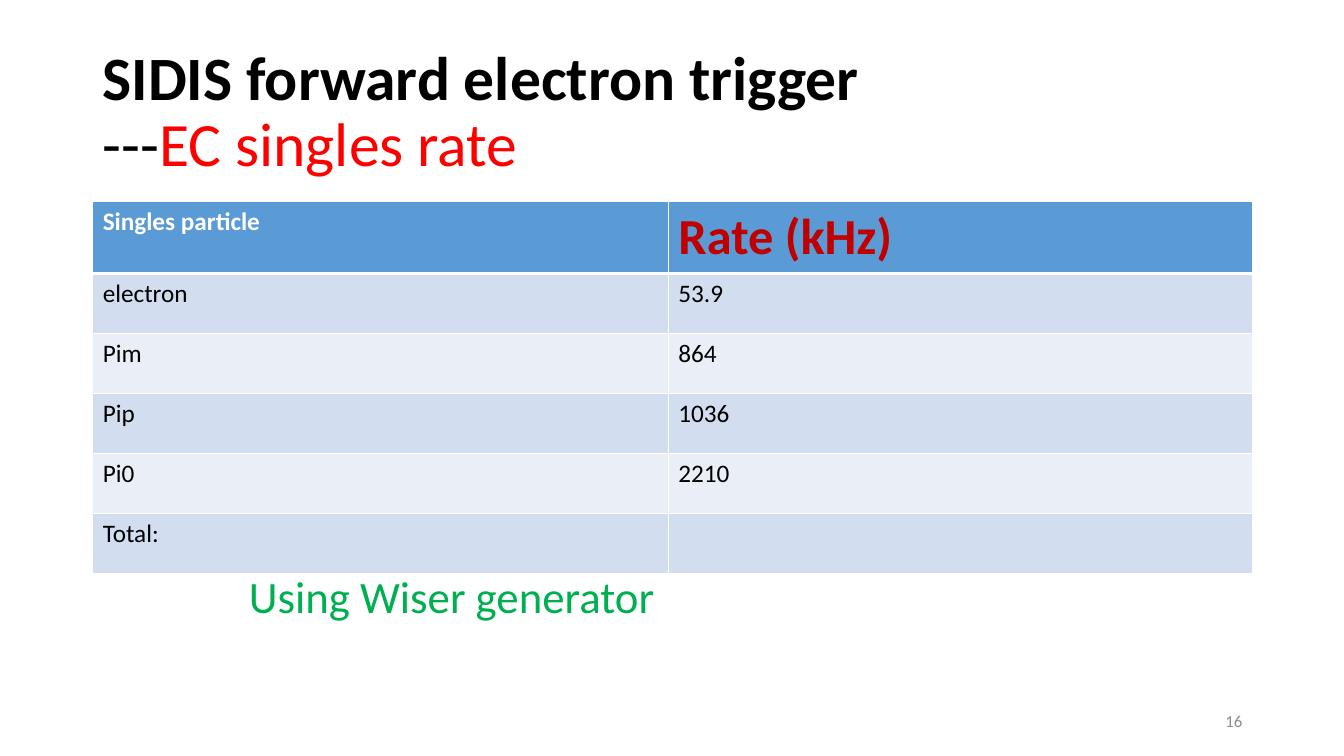
from dataclasses import dataclass

from pptx import Presentation
from pptx.dml.color import RGBColor
from pptx.enum.text import MSO_ANCHOR as Anchor, PP_ALIGN as Align
from pptx.oxml import parse_xml
from pptx.oxml.ns import nsdecls
from pptx.util import Emu, Inches, Pt

COLORS = {
    "black": "000000",
    "white": "FFFFFF",
    "red": "FF0000",
    "dark_red": "C00000",
    "green": "00B050",
    "gray": "8C8C8C",
    "header": "5B9BD5",
    "odd_row": "D2DEEF",
    "even_row": "EAEFF7",
}
FONT = "Calibri"
SLIDE_WIDTH = Inches(13.33)
SLIDE_HEIGHT = Inches(7.5)
COLUMN_SHARES = (49.65, 50.35)
HEADER_SHARE = 18.8
RATES = [
    ("Singles particle", "Rate (kHz)"),
    ("electron", "53.9"),
    ("Pim", "864"),
    ("Pip", "1036"),
    ("Pi0", "2210"),
    ("Total:", ""),
]


@dataclass(frozen=True)
class Area:
    left: float
    top: float
    width: float
    height: float

    def place(self) -> tuple[Emu, Emu, Emu, Emu]:
        return (
            share(SLIDE_WIDTH, self.left),
            share(SLIDE_HEIGHT, self.top),
            share(SLIDE_WIDTH, self.width),
            share(SLIDE_HEIGHT, self.height),
        )


@dataclass(frozen=True)
class Piece:
    text: str
    color: str
    bold: bool = False


@dataclass(frozen=True)
class Label:
    area: Area
    lines: tuple[tuple[Piece, ...], ...]
    size: int
    anchor: Anchor = Anchor.TOP
    align: Align = Align.LEFT
    spacing: float = 1.0


RATE_AREA = Area(6.9, 26.67, 86.27, 48.93)
LABELS = [
    Label(
        Area(6.9, 5.33, 86.27, 19.33),
        (
            (Piece("SIDIS forward electron trigger", "black", True),),
            (Piece("---", "black"), Piece("EC singles rate", "red")),
        ),
        44,
        anchor=Anchor.MIDDLE,
        spacing=0.9,
    ),
    Label(
        Area(17.78, 74.53, 64.07, 8.53),
        ((Piece("Using Wiser generator", "green"),),),
        32,
    ),
    Label(
        Area(70.67, 92.67, 22.5, 5.33),
        ((Piece("16", "gray"),),),
        12,
        anchor=Anchor.MIDDLE,
        align=Align.RIGHT,
    ),
]


def share(length: int, percent: float) -> Emu:
    return Emu(round(length * percent / 100))


def rgb(name: str) -> RGBColor:
    return RGBColor.from_string(COLORS[name])


def draw_label(slide, label: Label) -> None:
    frame = slide.shapes.add_textbox(*label.area.place()).text_frame
    frame.word_wrap = True
    frame.vertical_anchor = label.anchor
    paragraph = frame.paragraphs[0]
    paragraph.alignment = label.align
    paragraph.line_spacing = label.spacing
    paragraph.font.name = FONT
    paragraph.font.size = Pt(label.size)
    for number, line in enumerate(label.lines):
        if number:
            paragraph.add_line_break()
        for piece in line:
            run = paragraph.add_run()
            run.text = piece.text
            run.font.bold = piece.bold
            run.font.color.rgb = rgb(piece.color)


def draw_borders(cell, top: float, bottom: float) -> None:
    properties = cell._tc.get_or_add_tcPr()
    widths = {"lnL": 1, "lnR": 1, "lnT": top, "lnB": bottom}
    for position, (side, width) in enumerate(widths.items()):
        border = parse_xml(
            f'<a:{side} {nsdecls("a")} w="{Pt(width)}"><a:solidFill>'
            f'<a:srgbClr val="{COLORS["white"]}"/></a:solidFill></a:{side}>'
        )
        properties.insert(position, border)


def draw_rates(slide) -> None:
    rates = slide.shapes.add_table(
        len(RATES), len(COLUMN_SHARES), *RATE_AREA.place()
    ).table
    _, _, width, height = RATE_AREA.place()
    body_share = (100 - HEADER_SHARE) / (len(RATES) - 1)
    for column, percent in zip(rates.columns, COLUMN_SHARES):
        column.width = share(width, percent)
    for r, values in enumerate(RATES):
        header = r == 0
        rates.rows[r].height = share(height, HEADER_SHARE if header else body_share)
        fill = "header" if header else "odd_row" if r % 2 else "even_row"
        for c, value in enumerate(values):
            cell = rates.cell(r, c)
            cell.text = value
            cell.fill.solid()
            cell.fill.fore_color.rgb = rgb(fill)
            draw_borders(cell, top=3 if r == 1 else 1, bottom=3 if header else 1)
            font = cell.text_frame.paragraphs[0].font
            font.name = FONT
            font.size = Pt(36 if header and c == 1 else 18)
            font.bold = header
            font.color.rgb = rgb(("white", "dark_red")[c] if header else "black")


def main() -> None:
    deck = Presentation()
    deck.slide_width = SLIDE_WIDTH
    deck.slide_height = SLIDE_HEIGHT
    slide = deck.slides.add_slide(deck.slide_layouts[6])
    draw_rates(slide)
    for label in LABELS:
        draw_label(slide, label)
    deck.save("out.pptx")


if __name__ == "__main__":
    main()
